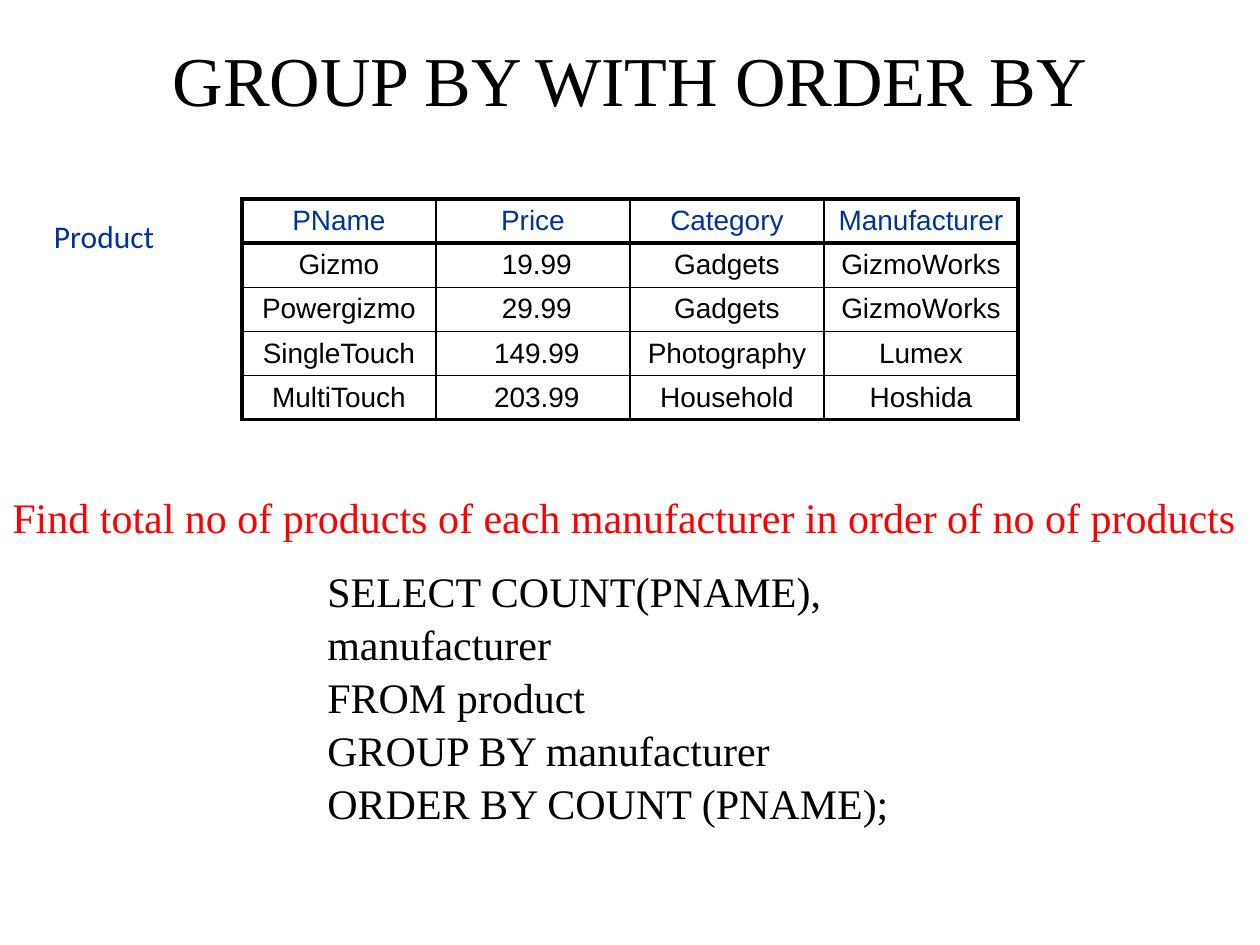
from dataclasses import dataclass

from lxml import etree
from pptx import Presentation
from pptx.dml.color import RGBColor
from pptx.enum.text import MSO_ANCHOR, PP_ALIGN
from pptx.oxml.ns import qn
from pptx.util import Inches, Pt

LEFT, CENTER = PP_ALIGN.LEFT, PP_ALIGN.CENTER
TOP, MIDDLE = MSO_ANCHOR.TOP, MSO_ANCHOR.MIDDLE

BLACK = RGBColor(0, 0, 0)
BLUE = RGBColor(0x00, 0x33, 0x99)
RED = RGBColor(0xFF, 0, 0)
SERIF = "Times New Roman"
THIN, THICK = Pt(1), Pt(2.25)

QUERY = [
    "SELECT COUNT(PNAME), manufacturer",
    "FROM product",
    "GROUP BY manufacturer",
    "ORDER BY COUNT (PNAME);",
]
ROWS = [
    ["PName", "Price", "Category", "Manufacturer"],
    ["Gizmo", " 19.99", "Gadgets", "GizmoWorks"],
    ["Powergizmo", " 29.99", "Gadgets", "GizmoWorks"],
    ["SingleTouch", " 149.99", "Photography", "Lumex"],
    ["MultiTouch", " 203.99", "Household", "Hoshida"],
]


@dataclass
class Label:
    text: str
    left: float
    top: float
    width: float
    height: float
    size: int
    font: str = SERIF
    color: RGBColor = BLACK
    align: PP_ALIGN = LEFT
    anchor: MSO_ANCHOR = TOP
    wrap: bool = True
    spacing: float = 1.0


LABELS = [
    Label("GROUP BY WITH ORDER BY", 0, 0, 10, 1.25, 40,
          align=CENTER, anchor=MIDDLE),
    Label("Product", 0.33, 1.67, 1.01, 0.4, 18, "Calibri", BLUE, wrap=False),
    Label("Find total no of products of each manufacturer in order of no of products",
          0, 3.83, 10.25, 0.5, 24, color=RED, spacing=1.05),
    Label("\v".join(QUERY), 2.5, 4.42, 5, 2.12, 24, spacing=1.05),
]


def style(para, size: int, name: str, color: RGBColor) -> None:
    para.font.size = Pt(size)
    para.font.name = name
    para.font.color.rgb = color


def add_label(slide, label: Label) -> None:
    box = slide.shapes.add_textbox(Inches(label.left), Inches(label.top),
                                   Inches(label.width), Inches(label.height))
    frame = box.text_frame
    frame.word_wrap = label.wrap
    frame.vertical_anchor = label.anchor
    para = frame.paragraphs[0]
    para.text = label.text
    para.alignment = label.align
    para.line_spacing = label.spacing
    style(para, label.size, label.font, label.color)


def set_edges(cell, widths: dict[str, int]) -> None:
    """Draw black cell borders; they must precede the fill in the XML."""
    props = cell._tc.get_or_add_tcPr()
    for spot, (side, width) in enumerate(widths.items()):
        line = etree.Element(qn(f"a:{side}"), w=str(width))
        fill = etree.SubElement(line, qn("a:solidFill"))
        etree.SubElement(fill, qn("a:srgbClr"), val=str(BLACK))
        props.insert(spot, line)


def add_grid(slide, rows: list[list[str]]) -> None:
    high, wide = len(rows), len(rows[0])
    table = slide.shapes.add_table(high, wide, Inches(1.92), Inches(1.58),
                                   Inches(1.54 * wide), Inches(0.35 * high)).table
    table.first_row = table.horz_banding = False
    for r, row in enumerate(rows):
        for c, text in enumerate(row):
            cell = table.cell(r, c)
            cell.vertical_anchor = MIDDLE
            cell.fill.background()
            para = cell.text_frame.paragraphs[0]
            para.text = text
            para.alignment = CENTER
            style(para, 16, "Arial", BLACK if r else BLUE)
            set_edges(cell, {
                "lnL": THICK if c == 0 else THIN,
                "lnR": THICK if c == wide - 1 else THIN,
                "lnT": THICK if r <= 1 else THIN,
                "lnB": THICK if r in (0, high - 1) else THIN,
            })


def main() -> None:
    deck = Presentation()
    deck.slide_width, deck.slide_height = Inches(10), Inches(7.5)
    slide = deck.slides.add_slide(deck.slide_layouts[6])
    add_grid(slide, ROWS)
    for label in LABELS:
        add_label(slide, label)
    deck.save("out.pptx")


if __name__ == "__main__":
    main()
